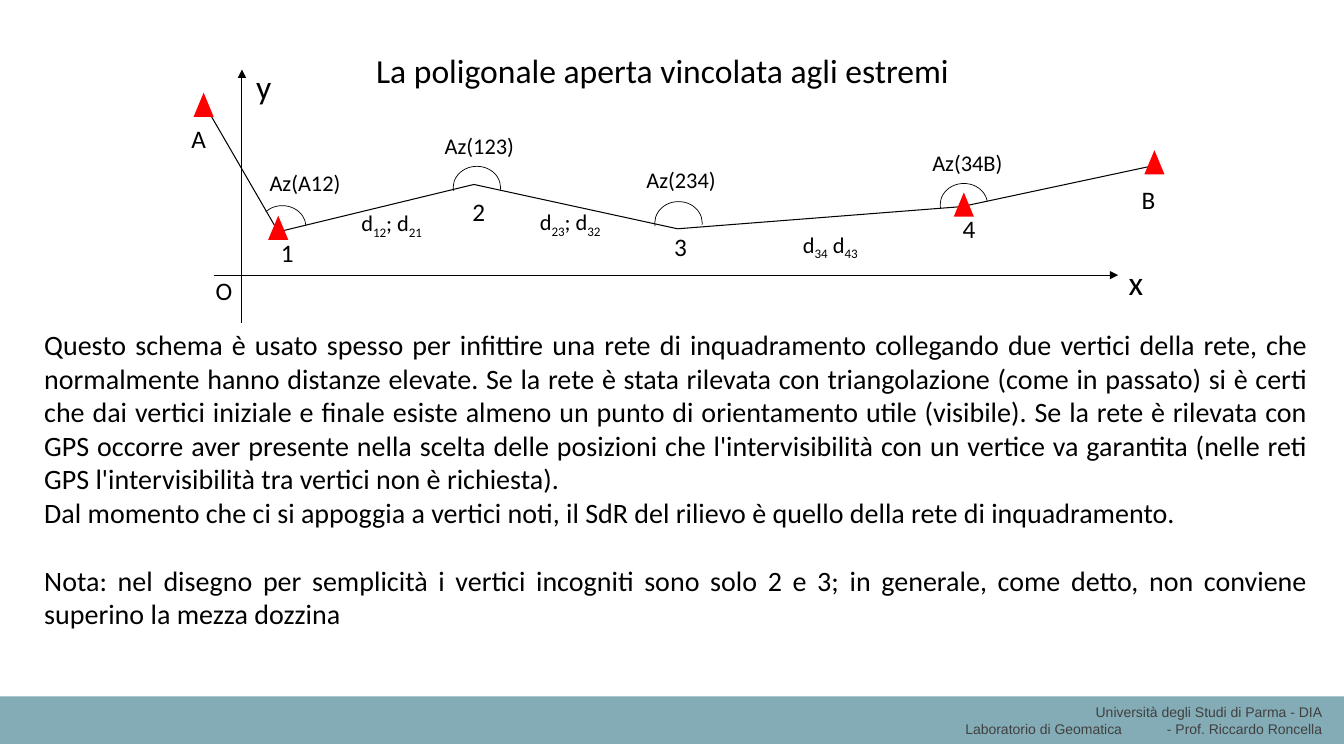
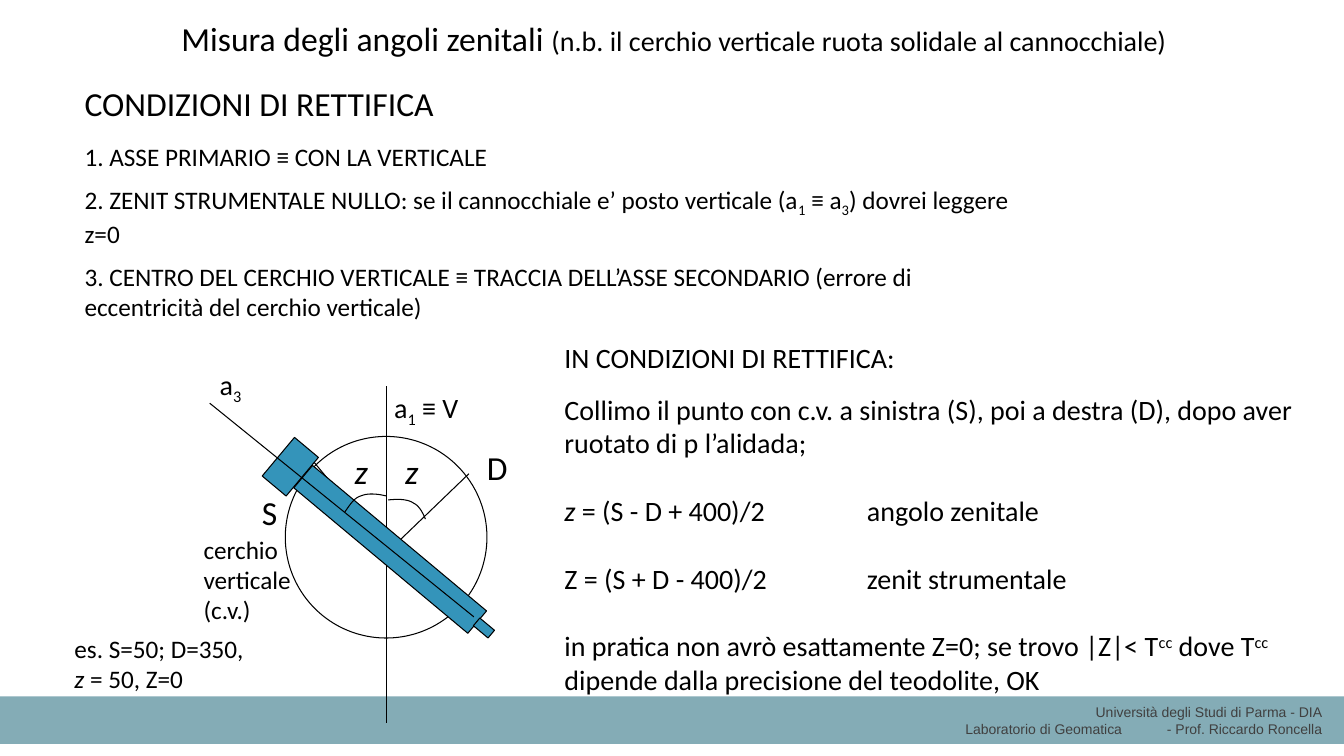
from dataclasses import dataclass
from itertools import pairwise

from lxml.etree import SubElement
from pptx import Presentation
from pptx.dml.color import RGBColor
from pptx.enum.shapes import MSO_CONNECTOR, MSO_SHAPE
from pptx.enum.text import MSO_ANCHOR, MSO_AUTO_SIZE, PP_ALIGN
from pptx.oxml.ns import qn
from pptx.util import Inches, Pt


@dataclass(frozen=True)
class Theme:
    width: float = 13.33
    height: float = 7.5
    font: str = "Calibri"
    footer_font: str = "Arial"
    ink: str = "000000"
    footer_ink: str = "404040"
    band: str = "84ACB6"
    marker: str = "FF0000"
    telescope: str = "3494BA"
    title: int = 24
    body: int = 20
    label: int = 18
    angle: int = 16
    footer: int = 10
    line: float = 0.75
    thin: float = 0.5
    blank_line: float = 24.4


THEME = Theme()
LEFT, CENTER, RIGHT, JUSTIFY = PP_ALIGN.LEFT, PP_ALIGN.CENTER, PP_ALIGN.RIGHT, PP_ALIGN.JUSTIFY


def sub(text):
    return text, {"baseline": -25}


def sup(text):
    return text, {"baseline": 30}


def italic(text):
    return text, {"italic": True}


# A paragraph is a string, or a list of strings and formatted spans.
FOOTER = ["Università degli Studi di Parma - DIA",
          "Laboratorio di Geomatica\t- Prof. Riccardo Roncella"]

TRAVERSE_TITLE = ["La poligonale aperta vincolata agli estremi"]
TRAVERSE_TEXT = [
    "Questo schema è usato spesso per infittire una rete di inquadramento collegando due vertici "
    "della rete, che normalmente hanno distanze elevate. Se la rete è stata rilevata con "
    "triangolazione (come in passato) si è certi che dai vertici iniziale e finale esiste almeno "
    "un punto di orientamento utile (visibile). Se la rete è rilevata con GPS occorre aver "
    "presente nella scelta delle posizioni che l'intervisibilità con un vertice va garantita "
    "(nelle reti GPS l'intervisibilità tra vertici non è richiesta).",
    "Dal momento che ci si appoggia a vertici noti, il SdR del rilievo è quello della rete di "
    "inquadramento.",
    "Nota: nel disegno per semplicità i vertici incogniti sono solo 2 e 3; in generale, come "
    "detto, non conviene superino la mezza dozzina",
]
VERTICES = [(2.03, 1.04), (2.76, 2.3), (4.7, 1.83), (6.72, 2.27), (9.54, 2.05), (11.41, 1.65)]
KNOWN_POINTS = [(2.02, 1.04), (2.76, 2.26), (9.56, 2.03), (11.45, 1.61)]
AXES = [((2.4, 3.2), (2.4, 0.69)), ((2.12, 2.73), (11.09, 2.73))]
AXIS_NAMES = [("y", 2.44, 0.6), ("x", 11.09, 2.55)]
POINT_NAMES = [("A", 1.8, 1.17), ("1", 2.68, 2.31), ("2", 4.58, 1.9), ("3", 6.58, 2.25),
               ("4", 9.44, 2.07), ("B", 11.22, 1.78), ("O", 2.04, 2.68)]
# Name, left and top of its text, centre of the arc, start and end of the arc.
ANGLES = [
    ("Az(A12)", (2.49, 1.63), (2.8, 2.25), (133.51, 214.36)),
    ("Az(123)", (4.22, 1.26), (4.73, 1.86), (103.27, 3.16)),
    ("Az(234)", (6.22, 1.6), (6.73, 2.21), (103.27, 3.16)),
    ("Az(34B)", (9.06, 1.43), (9.56, 2.03), (103.27, 211.23)),
]
DISTANCES = [("12", "; d", "21", 3.35, 2.03), ("23", "; d", "32", 5.12, 2.02),
             ("34", " d", "43", 7.7, 2.24)]

ZENITH_TITLE = ["Misura degli angoli zenitali ",
                ("(n.b. il cerchio verticale ruota solidale al cannocchiale)",
                 {"size": THEME.body})]
CONDITIONS = [
    "1. ASSE PRIMARIO ≡ CON LA VERTICALE",
    ["2. ZENIT STRUMENTALE NULLO: se il cannocchiale e’ posto verticale (a", sub("1"), " ≡ a",
     sub("3"), ") dovrei leggere z=0"],
    "3. CENTRO DEL CERCHIO VERTICALE ≡ TRACCIA DELL’ASSE SECONDARIO (errore di eccentricità del "
    "cerchio verticale)",
]
PROCEDURE = [
    "Collimo il punto con c.v. a sinistra (S), poi a destra (D), dopo aver ruotato di p l’alidada;",
    [italic("z"), " = (S - D + 400)/2\tangolo zenitale"],
    "Z = (S + D - 400)/2\tzenit strumentale",
    ["in pratica non avrò esattamente Z=0; se trovo |Z|< T", sup("cc"), " dove T", sup("cc"),
     " dipende dalla precisione del teodolite, OK"],
]
EXAMPLE = ["es. S=50; D=350,", [italic("z "), "= 50, Z=0"]]
# Box, paragraphs, size.
ZENITH_LABELS = [
    ((0.74, 0.77, 3.69, 0.5), ["CONDIZIONI DI RETTIFICA"], THEME.title),
    ((5.5, 3.33, 3.5, 0.44), ["IN CONDIZIONI DI RETTIFICA:"], THEME.body),
    ((2.5, 4.83, 0.35, 0.5), ["S"], THEME.title),
    ((4.73, 4.38, 0.41, 0.5), ["D"], THEME.title),
    ((3.42, 4.42, 0.34, 0.5), [[italic("z")]], THEME.title),
    ((3.92, 4.42, 0.34, 0.5), [[italic("z")]], THEME.title),
    ((3.81, 3.82, 0.85, 0.44), [["a", sub("1"), " ≡ V"]], THEME.body),
    ((2.08, 3.6, 0.43, 0.44), [["a", sub("3")]], THEME.body),
    ((1.92, 5.25, 1.12, 1), ["cerchio", "verticale", "(c.v.)"], THEME.label),
]
SIGHT_LINES = [((3.83, 3.83), (3.83, 7.17)), ((3.84, 5.48), (4.65, 4.7)),
               ((3.86, 5.48), (3.11, 4.58))]
TELESCOPE_AXIS = ((2.08, 4), (4.7, 6.12))
TELESCOPE_TILT = 309.9
TELESCOPE_PARTS = [((2.88, 4.63), (0.5, 0.31)), ((3.87, 5.45), (0.29, 2.25)),
                   ((4.8, 6.23), (0.1, 0.19))]
# Each curve is a start and its cubic pieces: two controls and an end.
ANGLE_CURVES = [
    ((3.42, 5.08), [((3.47, 5.01), (3.51, 4.94), (3.58, 4.92)),
                    ((3.65, 4.89), (3.74, 4.9), (3.83, 4.92))]),
    ((3.85, 4.96), [((3.95, 4.95), (4.04, 4.95), (4.1, 4.99)),
                    ((4.16, 5.02), (4.19, 5.08), (4.22, 5.15))]),
]


def inches(values):
    return [Inches(value) for value in values]


def around(center, size):
    """Box of the given size about a centre."""
    return center[0] - size[0] / 2, center[1] - size[1] / 2, *size


def write(box, paragraphs, size=THEME.label, align=LEFT, wrap=False, font=THEME.font,
          color=THEME.ink, gaps=None, tab=None):
    """Fill a text shape; gaps maps a paragraph's index to the points before it."""
    frame = box.text_frame
    frame.word_wrap = wrap
    frame.auto_size = MSO_AUTO_SIZE.SHAPE_TO_FIT_TEXT
    frame.vertical_anchor = MSO_ANCHOR.TOP
    for index, content in enumerate(paragraphs):
        para = frame.add_paragraph() if index else frame.paragraphs[0]
        para.alignment = align
        para.space_before = Pt((gaps or {}).get(index, 0))
        if tab:
            stops = SubElement(para._p.get_or_add_pPr(), qn("a:tabLst"))
            SubElement(stops, qn("a:tab"), pos=str(Inches(tab)), algn="l")
        for part in [content] if isinstance(content, str) else content:
            text, style = (part, {}) if isinstance(part, str) else part
            span = para.add_run()
            span.text = text
            span.font.name = font
            span.font.size = Pt(style.get("size", size))
            span.font.color.rgb = RGBColor.from_string(color)
            span.font.italic = style.get("italic")
            if "baseline" in style:
                span._r.get_or_add_rPr().set("baseline", str(style["baseline"] * 1000))


def add_text(page, place, paragraphs, **style):
    box = page.shapes.add_textbox(*inches(place))
    write(box, paragraphs, **style)
    return box


def paint(shape, fill=None, line=None):
    shape.shadow.inherit = False
    if fill:
        shape.fill.solid()
        shape.fill.fore_color.rgb = RGBColor.from_string(fill)
    else:
        shape.fill.background()
    if line:
        shape.line.color.rgb = RGBColor.from_string(THEME.ink)
        shape.line.width = Pt(line)
    else:
        shape.line.fill.background()
    return shape


def add_figure(page, kind, place, fill=None, line=None):
    return paint(page.shapes.add_shape(kind, *inches(place)), fill, line)


def add_line(page, start, end, arrow=False):
    line = page.shapes.add_connector(MSO_CONNECTOR.STRAIGHT, *inches((*start, *end)))
    line.line.color.rgb = RGBColor.from_string(THEME.ink)
    line.line.width = Pt(THEME.line)
    if arrow:
        SubElement(line.line._get_or_add_ln(), qn("a:tailEnd"), type="triangle")
    SubElement(line._element.spPr, qn("a:effectLst"))


def add_curve(page, start, pieces, steps=10):
    points, last = [], start
    for first, second, end in pieces:
        for step in range(1, steps + 1):
            t = step / steps
            weights = (1 - t) ** 3, 3 * t * (1 - t) ** 2, 3 * t * t * (1 - t), t ** 3
            corners = list(zip(last, first, second, end))
            points.append(inches(sum(w * c for w, c in zip(weights, axis)) for axis in corners))
        last = end
    builder = page.shapes.build_freeform(*inches(start))
    builder.add_line_segments(points, close=False)
    paint(builder.convert_to_shape(), line=THEME.line)


def add_page(deck, title, place):
    page = deck.slides.add_slide(deck.slide_layouts[5])
    heading = page.shapes.title
    heading.left, heading.top, heading.width, heading.height = inches(place)
    write(heading, [title], size=THEME.title)
    return page


def move_footer_to_layout(page):
    """Draw the band and credit once, and leave them on the page's layout."""
    layout = page.slide_layout
    for holder in list(layout.placeholders)[1:]:
        holder._element.getparent().remove(holder._element)
    band = add_figure(page, MSO_SHAPE.RECTANGLE, (0, 6.91, THEME.width, 0.47), THEME.band)
    credit = add_text(page, (9.06, 6.93, 4.15, 0.44), FOOTER, size=THEME.footer, align=RIGHT,
                      wrap=True, font=THEME.footer_font, color=THEME.footer_ink, tab=2)
    for shape in (band, credit):
        layout.shapes._spTree.append(shape._element)


def draw_traverse(page):
    add_text(page, (0.34, 3.2, 12.73, 3.13), TRAVERSE_TEXT, size=THEME.body, align=JUSTIFY,
             wrap=True, gaps={2: THEME.blank_line})
    for start, end in AXES:
        add_line(page, start, end, arrow=True)
    for start, end in pairwise(VERTICES):
        add_line(page, start, end)
    for center in KNOWN_POINTS:
        add_figure(page, MSO_SHAPE.ISOSCELES_TRIANGLE, around(center, (0.2, 0.24)), THEME.marker)
    for name, corner, center, ends in ANGLES:
        arc = add_figure(page, MSO_SHAPE.ARC, around(center, (0.47, 0.42)), line=THEME.thin)
        arc.adjustments[0], arc.adjustments[1] = ends
        add_text(page, (*corner, 1.07, 0.37), [name], size=THEME.angle, align=CENTER, wrap=True)
    for there, joint, back, left, top in DISTANCES:
        add_text(page, (left, top, 1.07, 0.37), [["d", sub(there), joint, sub(back)]],
                 size=THEME.angle, align=CENTER, wrap=True)
    for name, left, top in AXIS_NAMES:
        add_text(page, (left, top, 0.35, 0.5), [name], size=THEME.title, align=CENTER)
    for name, left, top in POINT_NAMES:
        add_text(page, (left, top, 0.34, 0.4), [name], align=CENTER)


def draw_zenith(page):
    add_text(page, (0.74, 1.35, 9.38, 1.92), CONDITIONS, wrap=True, gaps={1: 9, 2: 9})
    add_text(page, (5.5, 3.84, 7.62, 3.13), PROCEDURE, size=THEME.body, wrap=True, tab=3,
             gaps=dict.fromkeys((1, 2, 3), THEME.blank_line))
    add_text(page, (0.64, 6.23, 2.25, 0.7), EXAMPLE, wrap=True)
    add_figure(page, MSO_SHAPE.OVAL, (2.83, 4.33, 2, 2), line=THEME.line)
    for start, end in SIGHT_LINES:
        add_line(page, start, end)
    for center, size in TELESCOPE_PARTS:
        part = add_figure(page, MSO_SHAPE.RECTANGLE, around(center, size), THEME.telescope,
                          THEME.line)
        part.rotation = TELESCOPE_TILT
    add_line(page, *TELESCOPE_AXIS)
    for start, pieces in ANGLE_CURVES:
        add_curve(page, start, pieces)
    for place, paragraphs, size in ZENITH_LABELS:
        add_text(page, place, paragraphs, size=size)


def main():
    deck = Presentation()
    deck.slide_width, deck.slide_height = inches((THEME.width, THEME.height))
    traverse = add_page(deck, TRAVERSE_TITLE, (3.63, 0.44, 5.96, 0.51))
    move_footer_to_layout(traverse)
    draw_traverse(traverse)
    draw_zenith(add_page(deck, ZENITH_TITLE, (1.7, 0.13, 10.14, 0.51)))
    deck.save("out.pptx")


if __name__ == "__main__":
    main()
